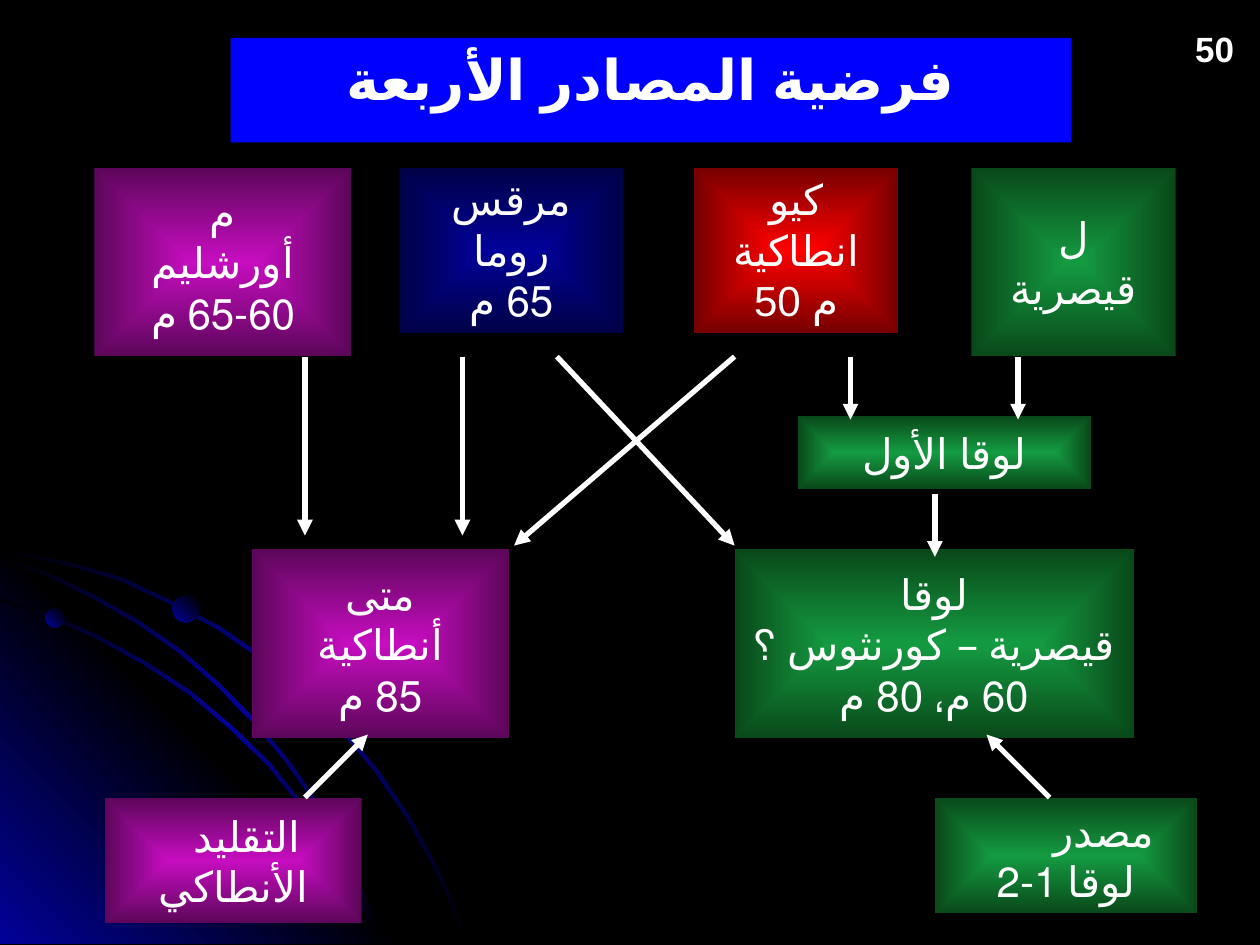
from lxml import etree
from pptx import Presentation
from pptx.dml import color
from pptx.enum import shapes, text
from pptx.oxml import ns
from pptx.util import Inches, Pt

THEME = {
    "font": "Arial", "white": "FFFFFF", "black": "000000", "banner": "0000FF", "glow": "010199",
    "title": 32, "box": 24, "number": 20, "arrow": 3,
    "red": ("FF0000", "760000"), "navy": ("010199", "010147"),
    "purple": ("C60DC0", "5C0659"), "green": ("149B41", "094819"),
}


def paint_gradient(shape, colors, angle=None):
    shape.shadow.inherit = False
    shape.line.fill.background()
    shape.fill.gradient()
    gradient = shape._element.spPr.find(ns.qn("a:gradFill"))
    for child in list(gradient):
        gradient.remove(child)
    stops = etree.SubElement(gradient, ns.qn("a:gsLst"))
    for index, value in enumerate(colors):
        position = round(100000 * index / (len(colors) - 1))
        stop = etree.SubElement(stops, ns.qn("a:gs"), pos=str(position))
        etree.SubElement(stop, ns.qn("a:srgbClr"), val=value)
    if angle is None:
        center = etree.SubElement(gradient, ns.qn("a:path"), path="rect")
        etree.SubElement(center, ns.qn("a:fillToRect"), l="50000", t="50000", r="50000", b="50000")
    else:
        etree.SubElement(gradient, ns.qn("a:lin"), ang=str(angle * 60000), scaled="0")


def write_text(shape, paragraphs, size, anchor, bold=False, rtl=True, first_margin=0):
    frame = shape.text_frame
    frame.text = "\n".join(paragraphs)
    frame_format = {
        "word_wrap": True, "auto_size": text.MSO_AUTO_SIZE.NONE, "vertical_anchor": anchor,
        "margin_left": Inches(0.1), "margin_right": Inches(0.1),
        "margin_top": Inches(0.05), "margin_bottom": Inches(0.05),
    }
    for name, value in frame_format.items():
        setattr(frame, name, value)
    for index, paragraph in enumerate(frame.paragraphs):
        paragraph.alignment = text.PP_ALIGN.CENTER
        properties = paragraph._p.get_or_add_pPr()
        shifted = index == 0 and first_margin > 0
        properties.set("rtl", "1" if rtl and not shifted else "0")
        if shifted:
            properties.set("marL", str(Inches(first_margin)))
            properties.set("indent", "0")
        for run in paragraph.runs:
            run_format = {"name": THEME["font"], "size": Pt(size), "bold": bold}
            for name, value in run_format.items():
                setattr(run.font, name, value)
            run.font.color.rgb = color.RGBColor.from_string(THEME["white"])
            run._r.get_or_add_rPr().set("lang", "ar-SA")


presentation = Presentation()
presentation.slide_width = Inches(10)
presentation.slide_height = Inches(7.5)
slide = presentation.slides.add_slide(presentation.slide_layouts[5])
slide.background.fill.solid()
slide.background.fill.fore_color.rgb = color.RGBColor.from_string(THEME["black"])

arcs = [
    [(0, 4.35), (0.28, 4.41), (0.57, 4.47), (0.98, 4.59), (1.36, 4.77), (1.74, 4.97),
     (2.09, 5.21), (2.42, 5.48), (2.72, 5.78), (3, 6.11), (3.25, 6.48), (3.39, 6.73),
     (3.52, 6.98), (3.62, 7.23), (3.72, 7.49)],
    [(0, 4.75), (0.41, 4.88), (0.79, 5.05), (1.17, 5.26), (1.52, 5.49), (1.84, 5.76),
     (2.15, 6.06), (2.42, 6.4), (2.66, 6.76), (2.86, 7.12), (2.96, 7.3), (3.03, 7.49)],
    [(0, 4.42), (0.39, 4.55), (0.76, 4.73), (1.11, 4.93), (1.44, 5.16), (1.75, 5.43),
     (2.04, 5.73), (2.29, 6.03), (2.54, 6.39), (2.69, 6.65), (2.82, 6.93), (2.94, 7.2),
     (3.03, 7.49)],
]
ribbons = [
    arc + [(max(0, x - 0.02), min(7.49, y + 0.02)) for x, y in reversed(arc)] for arc in arcs
]
corner = [(0, 4.27), (3.22, 7.49), (0, 7.49)]
black, glow = THEME["black"], THEME["glow"]
outlines = [(corner, (glow, black, glow), 315)]
outlines += [(ribbon, (black, glow, black), 45) for ribbon in ribbons]
for points, colors, angle in outlines:
    corners = [(Inches(x), Inches(y)) for x, y in points]
    builder = slide.shapes.build_freeform(*corners[0])
    builder.add_line_segments(corners[1:], close=True)
    paint_gradient(builder.convert_to_shape(), colors, angle)

for left, top, diameter, angle in [
    (0.36, 4.83, 0.15, 315), (2.67, 6.74, 0.16, 45), (1.37, 4.73, 0.21, 315),
]:
    dot = slide.shapes.add_shape(
        shapes.MSO_SHAPE.OVAL, Inches(left), Inches(top), Inches(diameter), Inches(diameter))
    paint_gradient(dot, (glow, black), angle)

title = slide.shapes.title
title_place = {"left": 1.83, "top": 0.3, "width": 6.67, "height": 0.83}
for name, value in title_place.items():
    setattr(title, name, Inches(value))
title.fill.solid()
title.fill.fore_color.rgb = color.RGBColor.from_string(THEME["banner"])
write_text(title, ["فرضية المصادر الأربعة"], THEME["title"], text.MSO_ANCHOR.TOP, bold=True)

number = slide.shapes.add_textbox(Inches(9.38), Inches(0.17), Inches(0.52), Inches(0.44))
write_text(number, ["50"], THEME["number"], text.MSO_ANCHOR.TOP, bold=True, rtl=False)
number.text_frame.word_wrap = False

top, middle = text.MSO_ANCHOR.TOP, text.MSO_ANCHOR.MIDDLE
boxes = [
    (5.51, 1.33, 1.62, 1.31, "red", ["كيو\vانطاكية", "50 م"], top, False, 0),
    (3.17, 1.33, 1.78, 1.31, "navy", ["مرقس\vروما\v65 م"], top, True, 0),
    (0.75, 1.33, 2.04, 1.5, "purple", ["م\vأورشليم\v60-65 م"], middle, True, 0),
    (7.71, 1.33, 1.62, 1.5, "green", ["ل\vقيصرية"], middle, True, 0),
    (2, 4.36, 2.04, 1.5, "purple", ["متى\vأنطاكية\v85 م"], middle, True, 0),
    (5.83, 4.36, 3.17, 1.5, "green", ["لوقا\vقيصرية – كورنثوس ؟\v60 م، 80 م"], middle, True, 0),
    (6.33, 3.3, 2.33, 0.58, "green", ["لوقا الأول"], middle, True, 0),
    (7.42, 6.33, 2.08, 0.92, "green", ["مصدر", "لوقا 1-2"], middle, True, 0.6),
    (0.83, 6.33, 2.04, 1, "purple", ["التقليد", "الأنطاكي"], middle, True, 0.22),
]
for left, upper, width, height, shade, paragraphs, anchor, rtl, margin in boxes:
    box = slide.shapes.add_shape(
        shapes.MSO_SHAPE.RECTANGLE, Inches(left), Inches(upper), Inches(width), Inches(height))
    paint_gradient(box, THEME[shade])
    write_text(box, paragraphs, THEME["box"], anchor, rtl=rtl, first_margin=margin)

arrows = [
    (3.67, 2.83, 3.67, 4.25), (6.75, 2.83, 6.75, 3.33), (4.42, 2.83, 5.83, 4.33),
    (5.83, 2.83, 4.08, 4.33), (8.08, 2.83, 8.08, 3.33), (7.42, 3.92, 7.42, 4.42),
    (2.42, 2.83, 2.42, 4.25), (2.42, 6.33, 2.92, 5.83), (8.33, 6.33, 7.83, 5.83),
]
for ends in arrows:
    arrow = slide.shapes.add_connector(
        shapes.MSO_CONNECTOR.STRAIGHT, *[Inches(value) for value in ends])
    arrow.line.width = Pt(THEME["arrow"])
    arrow.line.color.rgb = color.RGBColor.from_string(THEME["white"])
    etree.SubElement(arrow.line._get_or_add_ln(), ns.qn("a:tailEnd"), type="triangle")
    etree.SubElement(arrow._element.spPr, ns.qn("a:effectLst"))

presentation.save("out.pptx")
